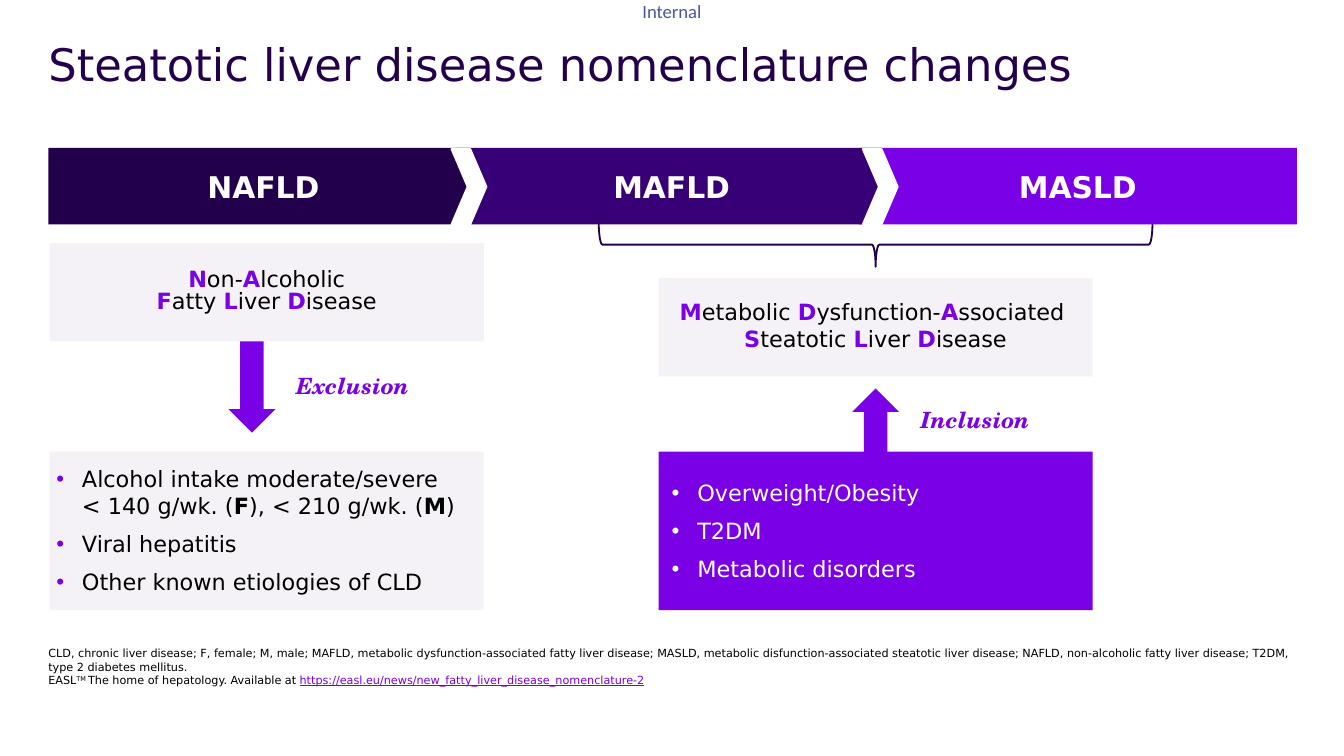
from lxml import etree
from pptx import Presentation, util as u
from pptx.dml.color import RGBColor
from pptx.enum import shapes, text
from pptx.oxml.ns import qn

COLORS = {"night": "23004C", "plum": "370077", "violet": "7A00E6", "mist": "F4F2F6",
          "white": "FFFFFF", "black": "000000", "label": "4A569E"}
SANS, SERIF = "DejaVu Sans", "TeX Gyre Schola"
SHAPE, ALIGN, ANCHOR = shapes.MSO_SHAPE, text.PP_ALIGN, text.MSO_ANCHOR


def add_block(kind, box, fill):
    block = deck_slide.shapes.add_shape(kind, *map(u.Inches, box))
    block.shadow.inherit = False
    block.fill.solid()
    block.fill.fore_color.rgb = RGBColor.from_string(COLORS[fill])
    block.line.fill.background()
    block.text_frame.word_wrap = True
    return block


def add_runs(paragraph, marked, size, color, strong=None, font=SANS):
    for i, piece in enumerate(marked.split("*")):
        for j, line in enumerate(piece.split("\n")):
            if j:
                paragraph.add_line_break()
            if line:
                run = paragraph.add_run()
                run.text = line
                run.font.name, run.font.size = font, u.Pt(size)
                run.font.bold = i % 2 == 1
                shade = strong if strong and i % 2 else color
                run.font.color.rgb = RGBColor.from_string(COLORS[shade])


deck = Presentation()
deck.slide_width = u.Inches(10)
deck.slide_height = u.Inches(10 * 9 / 16)
deck_slide = deck.slides.add_slide(deck.slide_layouts[1])
title, footnote = deck_slide.placeholders

for holder, box, anchor in [(title, (0.36, 0.32, 9.28, 0.79), ANCHOR.TOP),
                            (footnote, (0.36, 4.81, 9.27, 0.3), ANCHOR.BOTTOM)]:
    holder.left, holder.top, holder.width, holder.height = map(u.Inches, box)
    frame = holder.text_frame
    frame.margin_left = frame.margin_top = frame.margin_right = frame.margin_bottom = 0
    frame.vertical_anchor, frame.word_wrap = anchor, True
    frame.auto_size = text.MSO_AUTO_SIZE.NONE

heading = title.text_frame.paragraphs[0]
heading.alignment, heading.line_spacing = ALIGN.LEFT, 0.9
add_runs(heading, "Steatotic liver disease nomenclature changes", 24, "night")

abbreviations = footnote.text_frame.paragraphs[0]
reference = footnote.text_frame.add_paragraph()
for note in (abbreviations, reference):
    props = note._p.get_or_add_pPr()
    props.set("marL", "0")
    props.set("indent", "0")
    etree.SubElement(props, qn("a:buNone"))
    note.space_before = u.Pt(0)
add_runs(abbreviations, "CLD, chronic liver disease; F, female; M, male; MAFLD, metabolic "
         "dysfunction-associated fatty liver disease; MASLD, metabolic disfunction-associated "
         "steatotic liver disease; NAFLD, non-alcoholic fatty liver disease; T2DM, type 2 "
         "diabetes mellitus.", 6, "black")
for part, color in [("EASL", "black"), ("TM ", "black"),
                    ("The home of hepatology. Available at ", "black"),
                    ("https://easl.eu/news/new_fatty_liver_disease_nomenclature-2", "violet")]:
    add_runs(reference, part, 6, color)
reference.runs[1].font._element.set("baseline", "30000")
reference.runs[3].font.underline = True

for direction, left, top in [(180, 6.34, 2.89), (0, 1.7, 2.52)]:
    arrow = add_block(SHAPE.DOWN_ARROW, (left, top, 0.35, 0.7), "violet")
    arrow.rotation = direction

brace = add_block(SHAPE.LEFT_BRACE, (6.35, -0.24, 0.33, 4.12), "white")
brace.rotation = 270
brace.fill.background()
brace.line.color.rgb = RGBColor.from_string(COLORS["night"])
brace.line.width = u.Pt(1)

for stage, left, point, fill, gap in [("MASLD", 6.39, 0, "violet", None),
                                      ("MAFLD", 3.39, 0.152, "plum", 6.42),
                                      ("NAFLD", 0.36, 0.207, "night", 3.36)]:
    plate = add_block(SHAPE.PENTAGON, (left, 1.1, 3.26, 0.57), fill)
    plate.adjustments[0] = point
    plate.text_frame.vertical_anchor = ANCHOR.MIDDLE
    stage_name = plate.text_frame.paragraphs[0]
    stage_name.alignment = ALIGN.CENTER
    add_runs(stage_name, f"*{stage}*", 16, "white")
    if gap:
        outline = [(u.Inches(gap + dx), u.Inches(y))
                   for dx, y in [(0, 1.11), (0.14, 1.11), (0.26, 1.39),
                                 (0.14, 1.67), (0, 1.67), (0.12, 1.39)]]
        builder = deck_slide.shapes.build_freeform(*outline[0])
        builder.add_line_segments(outline[1:], close=True)
        chevron = builder.convert_to_shape()
        chevron.shadow.inherit = False
        chevron.fill.solid()
        chevron.fill.fore_color.rgb = RGBColor.from_string(COLORS["white"])
        chevron.line.color.rgb = RGBColor.from_string(COLORS["white"])
        chevron.line.width = u.Pt(1)

for left, top, after, lines in [
        (0.37, 1.81, 0, ["*N*on-*A*lcoholic", "*F*atty *L*iver *D*isease"]),
        (4.9, 2.07, 3, ["*M*etabolic *D*ysfunction-*A*ssociated ",
                        "*S*teatotic *L*iver *D*isease"])]:
    definition = add_block(SHAPE.ROUNDED_RECTANGLE, (left, top, 3.23, 0.73), "mist")
    definition.adjustments[0] = 0
    frame = definition.text_frame
    frame.vertical_anchor = ANCHOR.MIDDLE
    for i, line in enumerate(lines):
        words = frame.add_paragraph() if i else frame.paragraphs[0]
        words.alignment, words.line_spacing = ALIGN.CENTER, 0.8
        words.space_after = u.Pt(after)
        add_runs(words, line, 12, "black", "violet")

for left, fill, color, bullet_color, anchor, inset, items in [
        (0.37, "mist", "black", "violet", ANCHOR.TOP, 0.05,
         ["Alcohol intake moderate/severe \n< 140 g/wk. (*F*), < 210 g/wk. (*M*)",
          "Viral hepatitis", "Other known etiologies of CLD"]),
        (4.9, "violet", "white", "white", ANCHOR.MIDDLE, 0.1,
         ["Overweight/Obesity", "T2DM", "Metabolic disorders"])]:
    criteria = add_block(SHAPE.RECTANGLE, (left, 3.36, 3.23, 1.18), fill)
    frame = criteria.text_frame
    frame.vertical_anchor = anchor
    frame.margin_left = frame.margin_right = u.Inches(inset)
    if anchor == ANCHOR.TOP:
        frame.margin_top = frame.margin_bottom = u.Inches(0.1)
    for i, item in enumerate(items):
        criterion = frame.add_paragraph() if i else frame.paragraphs[0]
        props = criterion._p.get_or_add_pPr()
        props.set("marL", str(u.Inches(0.19)))
        props.set("indent", str(-u.Inches(0.19)))
        tint = etree.SubElement(props, qn("a:buClr"))
        etree.SubElement(tint, qn("a:srgbClr"), val=COLORS[bullet_color])
        etree.SubElement(props, qn("a:buFont"), typeface="Arial")
        etree.SubElement(props, qn("a:buChar"), char="•")
        criterion.alignment = ALIGN.LEFT
        criterion.space_before = u.Pt(6 if i else 0)
        add_runs(criterion, item, 12, color)

for words, box, align, size, color, font in [
        ("Internal", (4.78, 0, 0.47, 0.17), ALIGN.LEFT, 10, "label", "Calibri"),
        ("*Exclusion*", (2.06, 2.77, 1.13, 0.2), ALIGN.CENTER, 12, "violet", SERIF),
        ("*Inclusion*", (6.85, 3.02, 1.25, 0.2), ALIGN.LEFT, 12, "violet", SERIF)]:
    caption = deck_slide.shapes.add_textbox(*map(u.Inches, box))
    frame = caption.text_frame
    frame.margin_left = frame.margin_top = frame.margin_right = frame.margin_bottom = 0
    frame.word_wrap = font == SERIF
    line = frame.paragraphs[0]
    line.alignment = align
    add_runs(line, words, size, color, font=font)
    line.runs[0].font.italic = font == SERIF

deck.save("out.pptx")
